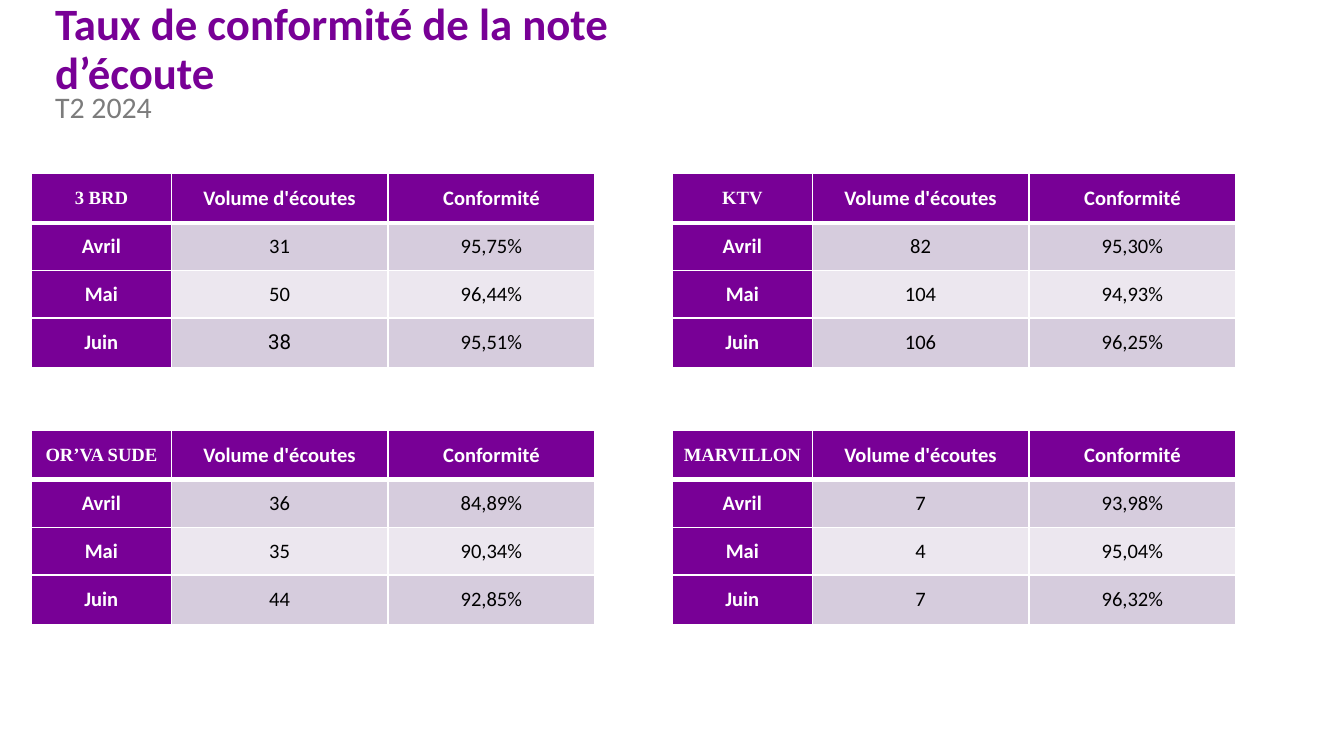
from pptx import Presentation
from pptx.dml.color import RGBColor
from pptx.enum.text import MSO_ANCHOR, PP_ALIGN
from pptx.oxml import parse_xml
from pptx.oxml.ns import nsdecls
from pptx.util import Pt

MID = MSO_ANCHOR.MIDDLE
CENTER = PP_ALIGN.CENTER

PURPLE, WHITE, BLACK, GREY = "780096", "FFFFFF", "000000", "7C7C7C"
BANDS = ["D6CCDD", "ECE7EF"]

HEADS = [
    ("Taux de conformité de la note d’écoute", 12.2, 29.5,
     {"size": Pt(24), "bold": True}, PURPLE),
    ("T2 2024", 46, 24.5, {"size": Pt(16), "bold": False}, GREY),
]
TITLES = ["Volume d'écoutes", "Conformité"]
MONTHS = ["Avril", "Mai", "Juin"]
TABLES = [
    ("3 BRD", [("31", "95,75%"), ("50", "96,44%"), ("38", "95,51%")]),
    ("OR’VA SUDE", [("36", "84,89%"), ("35", "90,34%"), ("44", "92,85%")]),
    ("KTV", [("82", "95,30%"), ("104", "94,93%"), ("106", "96,25%")]),
    ("MARVILLON", [("7", "93,98%"), ("4", "95,04%"), ("7", "96,32%")]),
]
FONTS = {"3 BRD": {(3, 1): "Roboto"}}

LEFT, TOP = 16.8, 93
STEP_X, STEP_Y = 343.4, 137.6
COLS = [75, 116, 111]
ROWS = [26.5, 25.5, 25.5, 26.5]

CELL = {"margin_left": Pt(3.6), "margin_right": Pt(3.6), "margin_top": 0,
        "margin_bottom": 0, "vertical_anchor": MID}
LABEL = {"name": "Calibri", "size": Pt(11), "bold": True}
VALUE = {**LABEL, "bold": False}
FIRM = {"name": "Times New Roman", "size": Pt(10), "bold": True}


def rgb(code):
    """Turn a hex string into a colour."""
    return RGBColor.from_string(code)


def apply(item, form):
    """Set each format value on the item."""
    for key, value in form.items():
        setattr(item, key, value)


def write(para, text, form, color):
    """Put one formatted run in a paragraph."""
    run = para.add_run()
    run.text = text
    apply(run.font, form)
    run.font.color.rgb = rgb(color)


def edge(cell, row):
    """Draw the white borders of a cell."""
    thick = {"T": row == 1, "B": row == 0}
    props = cell._tc.get_or_add_tcPr()
    for side in "LRTB":
        width = Pt(3 if thick.get(side) else 1)
        props.append(parse_xml(
            f'<a:ln{side} {nsdecls("a")} w="{width}"><a:solidFill>'
            f'<a:srgbClr val="{WHITE}"/></a:solidFill></a:ln{side}>'))


def style(row, col):
    """Give the font format, text colour and fill of a cell."""
    if row == 0 and col == 0:
        return FIRM, WHITE, PURPLE
    if row == 0 or col == 0:
        return LABEL, WHITE, PURPLE
    return VALUE, BLACK, BANDS[(row - 1) % 2]


def add_grid(slide, firm, data, x, y):
    """Add the table of one firm."""
    rows = [[firm, *TITLES]]
    rows += [[month, *pair] for month, pair in zip(MONTHS, data)]
    frame = slide.shapes.add_table(len(ROWS), len(COLS), Pt(x), Pt(y),
                                   Pt(sum(COLS)), Pt(sum(ROWS)))
    table = frame.table
    table.horz_banding = False
    for col, width in zip(table.columns, COLS):
        col.width = Pt(width)
    for r, texts in enumerate(rows):
        table.rows[r].height = Pt(ROWS[r])
        for c, text in enumerate(texts):
            cell = table.cell(r, c)
            form, ink, fill = style(r, c)
            face = FONTS.get(firm, {}).get((r, c), form["name"])
            apply(cell, CELL)
            edge(cell, r)
            cell.fill.solid()
            cell.fill.fore_color.rgb = rgb(fill)
            para = cell.text_frame.paragraphs[0]
            para.alignment = CENTER
            write(para, text, {**form, "name": face}, ink)


def main():
    """Build and save the slide."""
    deck = Presentation()
    apply(deck, {"slide_width": Pt(720), "slide_height": Pt(405)})
    slide = deck.slides.add_slide(deck.slide_layouts[6])
    for text, y, height, form, color in HEADS:
        box = slide.shapes.add_textbox(Pt(22.5), Pt(y), Pt(396.5), Pt(height))
        frame = box.text_frame
        apply(frame, {"word_wrap": True, "vertical_anchor": MID})
        para = frame.paragraphs[0]
        para.line_spacing = 0.9
        write(para, text, {"name": "Calibri", **form}, color)
    for i, (firm, data) in enumerate(TABLES):
        col, row = divmod(i, 2)
        add_grid(slide, firm, data, LEFT + col * STEP_X, TOP + row * STEP_Y)
    deck.save("out.pptx")


if __name__ == "__main__":
    main()
